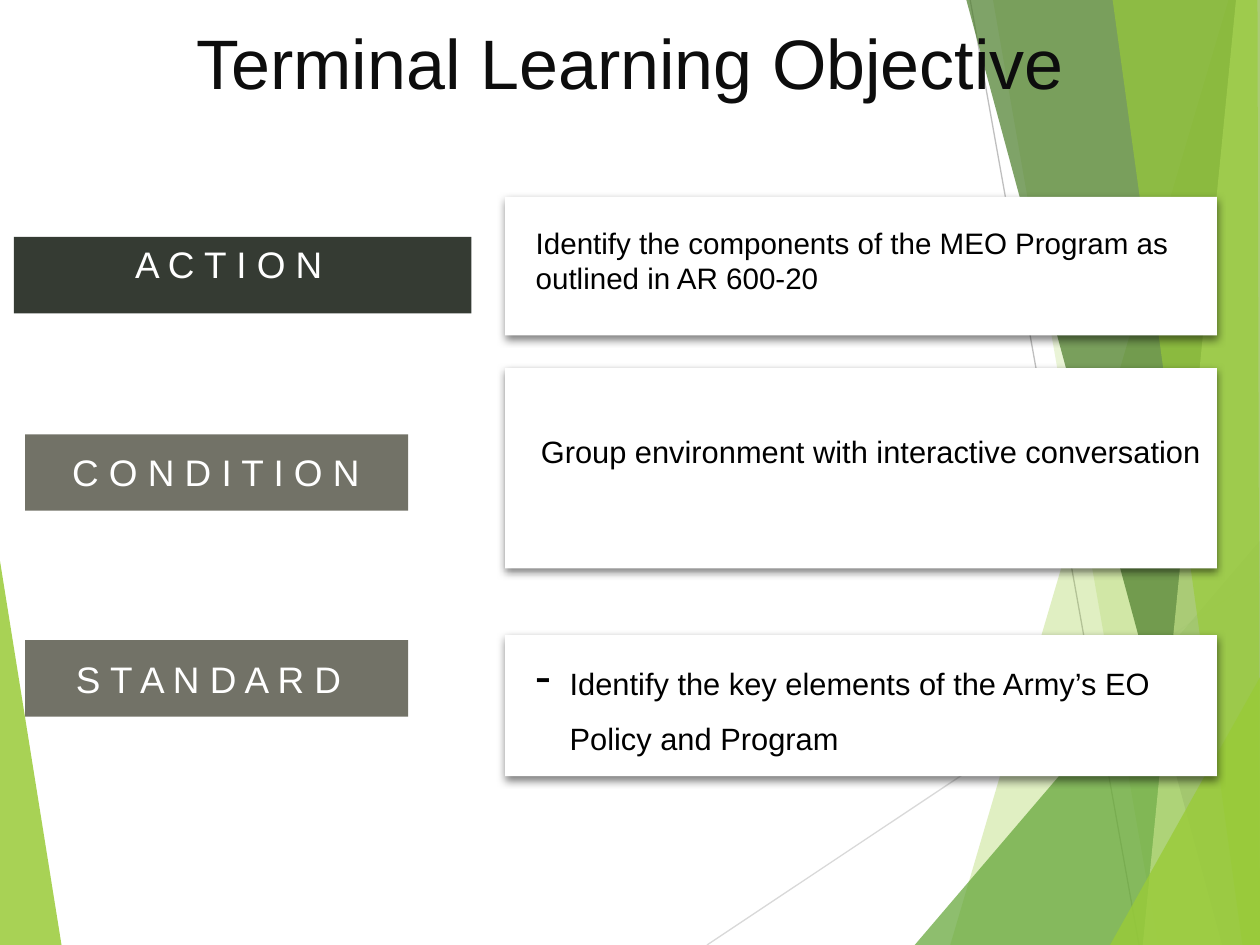
from lxml import etree
from pptx import Presentation
from pptx.dml.color import RGBColor
from pptx.enum.shapes import MSO_CONNECTOR, MSO_SHAPE
from pptx.enum.text import MSO_ANCHOR, PP_ALIGN
from pptx.oxml.ns import qn
from pptx.util import Pt

RECT = MSO_SHAPE.RECTANGLE
STRAIGHT = MSO_CONNECTOR.STRAIGHT
MIDDLE = MSO_ANCHOR.MIDDLE
CENTER = PP_ALIGN.CENTER
TITLE_ONLY = 5


def paint(color_format, hex_color, opacity=100):
    """Set a solid fill's or line's colour, with opacity in percent."""
    color_format.solid()
    color_format.fore_color.rgb = RGBColor.from_string(hex_color)
    if opacity < 100:
        color = color_format.fore_color._xFill.find(qn("a:srgbClr"))
        etree.SubElement(color, qn("a:alpha"), val=str(opacity * 1000))


def write(frame, lines, size, hex_color, wrap=True, margin=3):
    """Put one run in each paragraph of a middle-anchored frame."""
    frame.word_wrap = wrap
    frame.vertical_anchor = MIDDLE
    frame.margin_left = frame.margin_right = Pt(margin)
    frame.margin_top = frame.margin_bottom = Pt(margin)
    for number, line in enumerate(lines):
        paragraph = frame.add_paragraph() if number else frame.paragraphs[0]
        run = paragraph.add_run()
        run.text = line
        run.font.name = "Arial"
        run.font.size = Pt(size)
        paint(run.font.fill, hex_color)


prs = Presentation()
prs.slide_width, prs.slide_height = Pt(720), Pt(540)
slide = prs.slides.add_slide(prs.slide_layouts[TITLE_ONLY])
shapes = slide.shapes
paint(slide.background.fill, "FFFFFF")

# Background rays
for x1, y1, x2, y2, ray_color in [
    (404, 540, 720.7, 329, "D9D9D9"),
    (554.4, 0, 650.9, 540, "BFBFBF"),
]:
    ray = shapes.add_connector(STRAIGHT, Pt(x1), Pt(y1), Pt(x2), Pt(y2))
    paint(ray.line.fill, ray_color)
    ray.line.width = Pt(0.75)
    etree.SubElement(ray.element.spPr, qn("a:effectLst"))

# Background facets: corners, colour, opacity
facets = [
    ([(-0.7, 316), (35.3, 540.7), (-0.7, 540)], "99CB38", 85),
    ([(702, 0), (543, 540), (721, 540), (721, 0)], "99CB38", 30),
    ([(567.4, 0), (661.7, 540), (721, 540), (721, 0)], "99CB38", 20),
    ([(522.7, 540), (720, 309), (721, 540)], "63A537", 72),
    ([(552.2, 0), (698.4, 540), (721, 540), (721, 0)], "4A7C29", 70),
    ([(706.3, 0), (653, 540), (721, 540), (720, 0)], "C2E088", 70),
    ([(635.8, 0), (710, 540), (720, 540), (718.6, 0)], "99CB38", 65),
    ([(634.3, 540), (721, 385.2), (721, 540)], "99CB38", 80),
]
for corners, facet_color, opacity in facets:
    start, *others = [(Pt(x), Pt(y)) for x, y in corners]
    builder = shapes.build_freeform(*start)
    builder.add_line_segments(others, close=True)
    facet = builder.convert_to_shape()
    paint(facet.fill, facet_color, opacity)
    facet.line.fill.background()
    facet.shadow.inherit = False

# Labels: text, text position and width, bar position, width and colour
labels = [
    ("A C T I O N", 74.2, 135.4, 113.8, 8, 261.4, "353B33"),
    ("C O N D I T I O N", 38.2, 254.2, 172, 14.4, 218.9, "727267"),
    ("S T A N D A R D", 40.3, 372.2, 159, 14.4, 218.9, "727267"),
]
bar_tops = [135.4, 248.2, 365.8]
for (label, x, y, width, bar_x, bar_width, bar_color), bar_top in zip(labels, bar_tops):
    bar = shapes.add_shape(RECT, Pt(bar_x), Pt(bar_top), Pt(bar_width), Pt(43.7))
    paint(bar.fill, bar_color)
    bar.line.fill.background()
    bar.shadow.inherit = False
    label_box = shapes.add_textbox(Pt(x), Pt(y), Pt(width), Pt(31))
    write(label_box.text_frame, [label], 21.1, "FFFFFF", wrap=False)

# Cards: top, height, text position and size, font size, lines
cards = [
    (112.5, 79.2, (303.1, 125.3, 409.7, 46.8), 16.9,
     ["Identify the components of the MEO Program as outlined in AR 600-20"]),
    (210.4, 114.5, (306, 243.4, 414, 28.8), 17.6,
     ["Group environment with interactive conversation"]),
    (362.9, 80.6, (303.1, 365.8, 414, 69.8), 17.6,
     ["Identify the key elements of the Army’s EO", "Policy and Program"]),
]
for top, height, text_area, size, lines in cards:
    card = shapes.add_shape(RECT, Pt(288.6), Pt(top), Pt(406.8), Pt(height))
    paint(card.fill, "FFFFFF")
    card.line.fill.background()
    card.shadow.inherit = False
    shadow = etree.SubElement(
        card.element.spPr.find(qn("a:effectLst")), qn("a:outerShdw"),
        blurRad=str(Pt(5)), dist=str(Pt(2)), dir="5400000", rotWithShape="0")
    shadow_color = etree.SubElement(shadow, qn("a:srgbClr"), val="000000")
    etree.SubElement(shadow_color, qn("a:alpha"), val="50000")
    statement = shapes.add_textbox(*map(Pt, text_area))
    write(statement.text_frame, lines, size, "000000")

# The standard is a dashed item whose second line hangs under the first
standard_lines = statement.text_frame.paragraphs
for line in standard_lines:
    line.line_spacing = 1.5
    line._p.get_or_add_pPr().set("marL", str(Pt(19.4)))
dashed = standard_lines[0]._p.pPr
dashed.set("indent", str(-Pt(19.4)))
etree.SubElement(dashed, qn("a:buSzPct"), val="145000")
etree.SubElement(dashed, qn("a:buChar"), char="-")

# Title, in front of the facets
title = shapes.title
title.left, title.top, title.width, title.height = Pt(0), Pt(8), Pt(720), Pt(54)
write(title.text_frame, ["Terminal Learning Objective"], 40, "0D0D0D", margin=3.6)
title.text_frame.paragraphs[0].alignment = CENTER
title.element.getparent().append(title.element)

prs.save("out.pptx")
